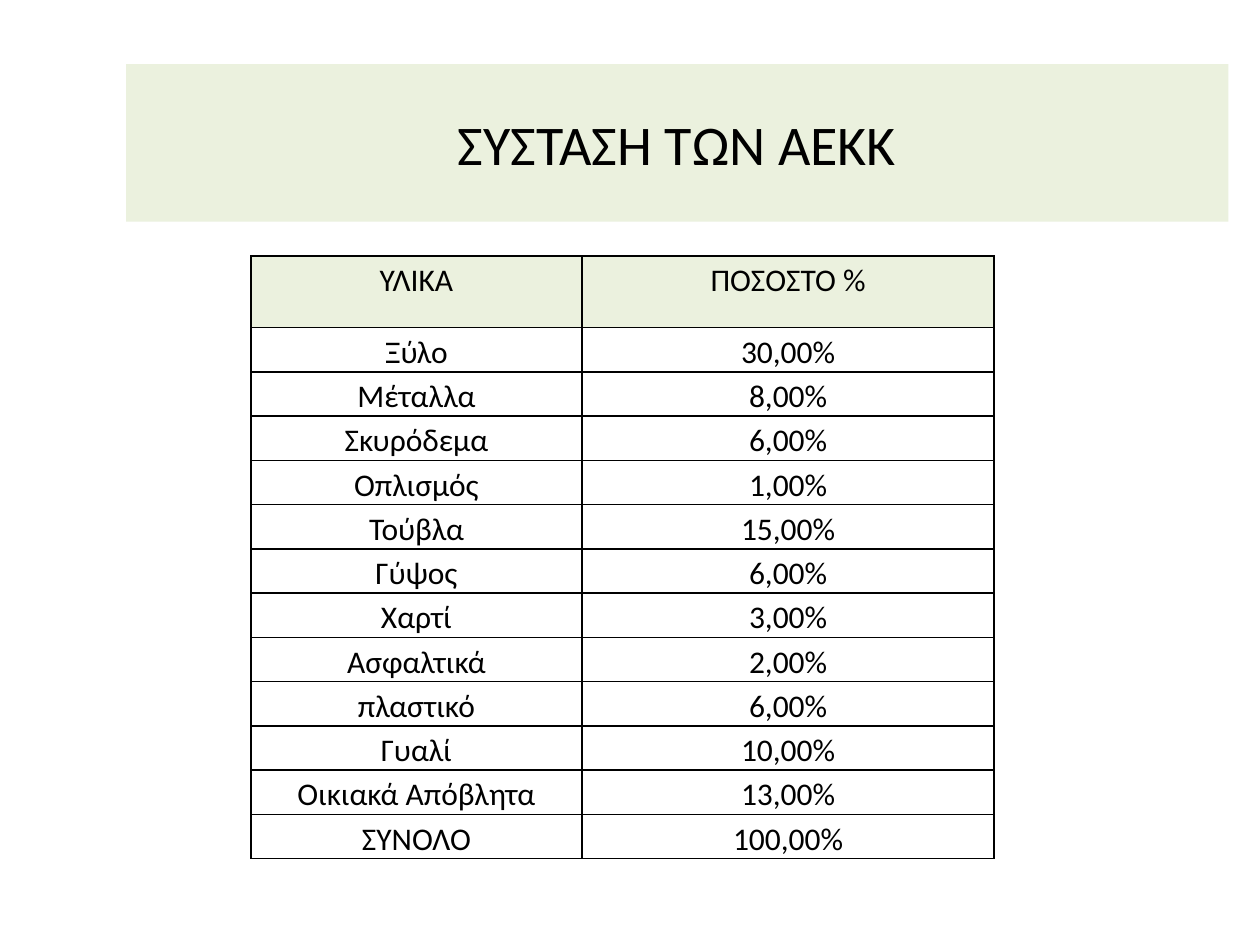
from lxml.etree import SubElement
from pptx import Presentation
from pptx.dml.color import RGBColor
from pptx.enum.text import MSO_ANCHOR, PP_ALIGN
from pptx.oxml.ns import qn
from pptx.util import Inches, Pt

GREEN, WHITE, BLACK = "EBF1DE", "FFFFFF", "000000"
COLUMN_WIDTHS = (2.63, 3.27)
HEADER_HEIGHT, ROW_HEIGHT = 0.57, 0.35
MATERIALS = [
    ("ΥΛΙΚΑ", "ΠΟΣΟΣΤΟ %"),
    ("Ξύλο", "30,00%"),
    ("Μέταλλα", "8,00%"),
    ("Σκυρόδεμα", "6,00%"),
    ("Οπλισμός", "1,00%"),
    ("Τούβλα", "15,00%"),
    ("Γύψος", "6,00%"),
    ("Χαρτί", "3,00%"),
    ("Ασφαλτικά", "2,00%"),
    ("πλαστικό", "6,00%"),
    ("Γυαλί", "10,00%"),
    ("Οικιακά Απόβλητα", "13,00%"),
    ("ΣΥΝΟΛΟ", "100,00%"),
]


def set_values(target, values):
    for name, value in values.items():
        setattr(target, name, value)


def paint(fill, color):
    fill.solid()
    fill.fore_color.rgb = RGBColor.from_string(color)


def write(frame, text, size, spacing):
    para = frame.paragraphs[0]
    set_values(para, {"alignment": PP_ALIGN.CENTER, "line_spacing": spacing})
    span = para.add_run()
    span.text = text
    set_values(span.font, {"name": "Calibri", "size": Pt(size)})
    span.font.color.rgb = RGBColor.from_string(BLACK)


def add_borders(cell):
    properties = cell._tc.get_or_add_tcPr()
    for side in ("a:lnL", "a:lnR", "a:lnT", "a:lnB"):
        line = SubElement(properties, qn(side), w=str(Pt(1)))
        fill = SubElement(line, qn("a:solidFill"))
        SubElement(fill, qn("a:srgbClr"), val=BLACK)


def format_title(title, text):
    set_values(title, {
        "left": Inches(1), "top": Inches(0.51),
        "width": Inches(8.75), "height": Inches(1.25),
    })
    paint(title.fill, GREEN)
    title.text_frame.vertical_anchor = MSO_ANCHOR.MIDDLE
    write(title.text_frame, text, 32, 1.0)


def fill_cell(cell, text, color):
    set_values(cell, {
        "margin_left": Inches(0.07), "margin_right": Inches(0.07),
        "margin_top": 0, "margin_bottom": 0,
        "vertical_anchor": MSO_ANCHOR.TOP,
    })
    add_borders(cell)
    paint(cell.fill, color)
    write(cell.text_frame, text, 18, 1.15)


def add_materials_table(page):
    height = HEADER_HEIGHT + ROW_HEIGHT * (len(MATERIALS) - 1)
    table = page.shapes.add_table(
        len(MATERIALS), len(COLUMN_WIDTHS), Inches(1.99), Inches(2.03),
        Inches(sum(COLUMN_WIDTHS)), Inches(height),
    ).table
    table.horz_banding = False
    for column, width in zip(table.columns, COLUMN_WIDTHS):
        column.width = Inches(width)
    for index, (row, texts) in enumerate(zip(table.rows, MATERIALS)):
        row.height = Inches(ROW_HEIGHT if index else HEADER_HEIGHT)
        for cell, text in zip(row.cells, texts):
            fill_cell(cell, text, WHITE if index else GREEN)
            cell.text_frame.paragraphs[0].runs[0].font.bold = False


def main():
    deck = Presentation()
    set_values(deck, {"slide_width": Inches(10), "slide_height": Inches(7.5)})
    page = deck.slides.add_slide(deck.slide_layouts[5])
    format_title(page.shapes.title, "ΣΥΣΤΑΣΗ ΤΩΝ ΑΕΚΚ")
    add_materials_table(page)
    deck.save("out.pptx")


if __name__ == "__main__":
    main()
